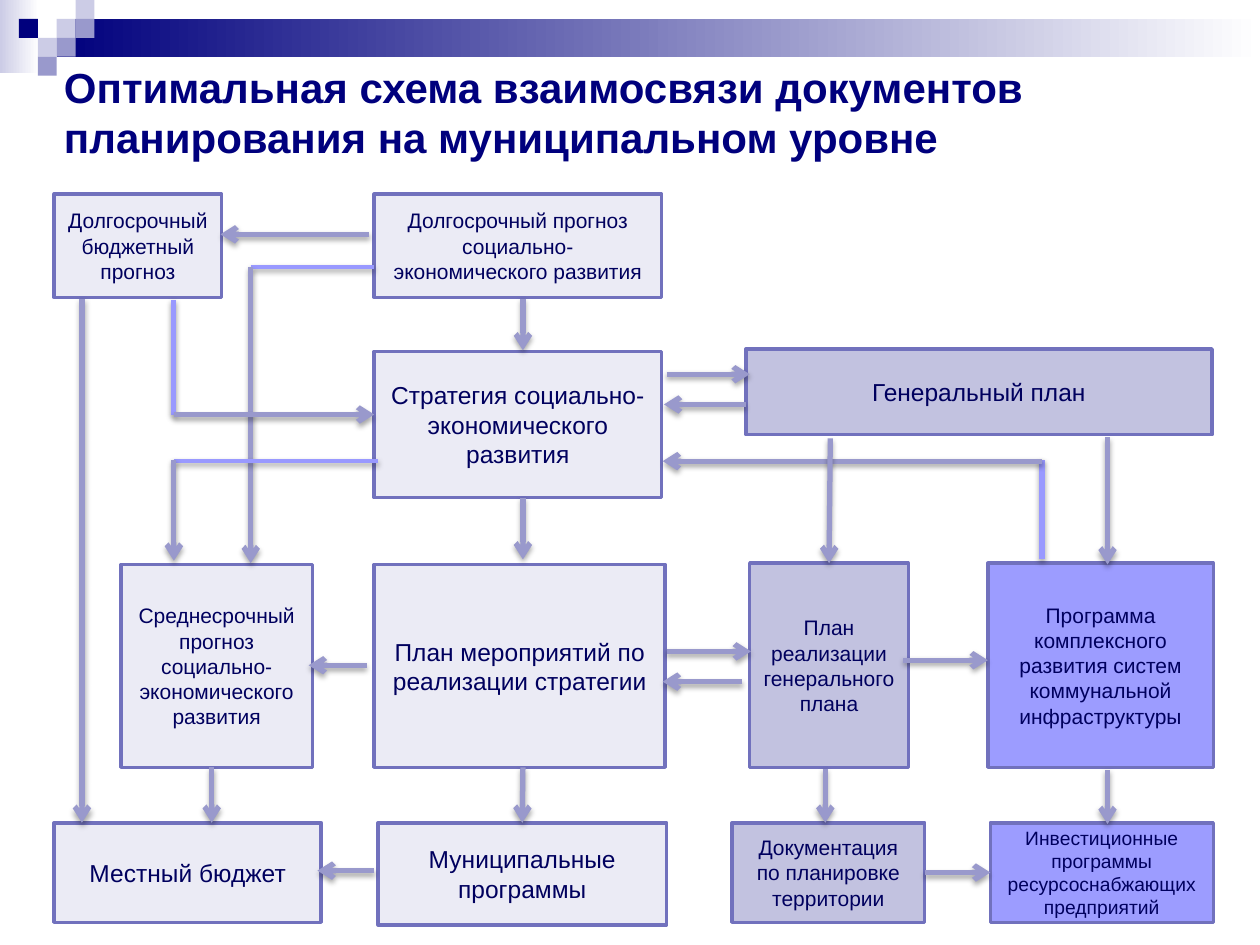
from typing import NamedTuple, Optional

from lxml.etree import SubElement
from pptx import Presentation
from pptx.dml.color import RGBColor
from pptx.enum.shapes import MSO_CONNECTOR, MSO_SHAPE
from pptx.enum.text import MSO_ANCHOR, PP_ALIGN
from pptx.oxml.ns import qn
from pptx.util import Inches, Pt

COLORS = {
    "navy": "00007D", "text": "00005E", "border": "7171BD",
    "pale": "EBEBF5", "lilac": "C2C2E0", "violet": "9C9CFF",
    "arrow": "9999CC", "branch": "9999FF",
    "light": "CCCCE6", "mid": "9999CC", "white": "FFFFFF",
}
TOP, LEFT, BOTTOM, RIGHT = range(4)


class Document(NamedTuple):
    text: str
    left: float
    top: float
    width: float
    height: float
    fill: str = "pale"
    size: int = 14


class Link(NamedTuple):
    x1: float
    y1: float
    x2: float
    y2: float
    begin: Optional[tuple] = None  # (document key, side)
    end: Optional[tuple] = None
    color: str = "arrow"
    width: float = 3
    arrow: bool = True


class Square(NamedTuple):
    column: int
    row: int
    color: str


DOCUMENTS = {
    "budget_forecast": Document("Долгосрочный бюджетный прогноз", 0.43, 1.54, 1.33, 0.82, size=12),
    "long_forecast": Document("Долгосрочный прогноз социально-экономического развития",
                              2.97, 1.54, 2.28, 0.82, size=12),
    "strategy": Document("Стратегия социально-экономического развития", 2.97, 2.79, 2.28, 1.16),
    "general_plan": Document("Генеральный план", 5.92, 2.77, 3.7, 0.68, "lilac"),
    "mid_forecast": Document("Среднесрочный прогноз социально-экономического развития",
                             0.96, 4.48, 1.52, 1.61, size=12),
    "actions": Document("План мероприятий по реализации стратегии", 2.97, 4.48, 2.31, 1.61),
    "plan_delivery": Document("План реализации генерального плана",
                              5.95, 4.47, 1.26, 1.62, "lilac", 12),
    "utilities": Document("Программа комплексного развития систем коммунальной инфраструктуры",
                          7.84, 4.47, 1.79, 1.62, "violet", 12),
    "local_budget": Document("Местный бюджет", 0.43, 6.53, 2.12, 0.79),
    "programs": Document("Муниципальные программы", 3, 6.53, 2.29, 0.81),
    "layout_docs": Document("Документация по планировке территории",
                            5.81, 6.53, 1.53, 0.79, "lilac", 12),
    "investment": Document("Инвестиционные программы ресурсоснабжающих предприятий",
                           7.86, 6.53, 1.77, 0.79, "violet", 11),
}

LINKS = [
    # Forecasts
    Link(2.93, 1.86, 1.75, 1.86),
    Link(1.99, 2.12, 2.97, 2.12, color="branch", width=2, arrow=False),
    Link(1.99, 2.12, 1.99, 4.47),
    Link(4.15, 2.37, 4.15, 2.78),
    Link(0.65, 2.37, 0.65, 6.53),
    # Strategy
    Link(1.38, 3.29, 1.38, 2.38, color="branch", arrow=False),
    Link(1.38, 3.29, 2.97, 3.29),
    Link(1.38, 3.66, 3, 3.66, color="branch", width=2, arrow=False),
    Link(1.38, 3.65, 1.38, 4.45),
    Link(4.15, 3.95, 4.15, 4.44),
    Link(5.29, 2.97, 5.95, 2.97),
    Link(5.92, 3.21, 5.27, 3.21),
    Link(8.27, 4.44, 8.27, 3.65, color="branch", arrow=False),
    Link(8.27, 3.66, 5.26, 3.66),
    # General plan
    Link(6.59, 3.48, 6.59, 4.47, end=("plan_delivery", TOP)),
    Link(8.79, 3.47, 8.79, 4.48),
    # Action plans
    Link(2.91, 5.28, 2.45, 5.28),
    Link(5.29, 5.17, 5.96, 5.17),
    Link(5.89, 5.41, 5.26, 5.41),
    Link(7.17, 5.24, 7.84, 5.24),
    # Bottom row
    Link(1.68, 6.09, 1.68, 6.53),
    Link(4.15, 6.09, 4.15, 6.53, end=("programs", TOP)),
    Link(6.55, 6.1, 6.55, 6.53),
    Link(8.79, 6.11, 8.79, 6.54),
    Link(2.97, 6.91, 2.52, 6.91),
    Link(7.34, 6.93, 7.86, 6.93, begin=("layout_docs", RIGHT), end=("investment", LEFT)),
]

SQUARE_SIDE = 0.15
MOSAIC = [
    Square(3, 1, "light"), Square(4, 0, "light"), Square(4, 1, "mid"), Square(2, 2, "light"),
    Square(1, 1, "navy"), Square(3, 2, "mid"), Square(2, 3, "mid"),
]


def rgb(name: str) -> RGBColor:
    return RGBColor.from_string(COLORS[name])


def write(shape, text: str, *, size: float, color: str = "text", bold: bool = False,
          align=PP_ALIGN.CENTER) -> None:
    frame = shape.text_frame
    frame.word_wrap = True
    frame.vertical_anchor = MSO_ANCHOR.MIDDLE
    paragraph = frame.paragraphs[0]
    paragraph.alignment = align
    run = paragraph.add_run()
    run.text = text
    run.font.name = "Arial"
    run.font.size = Pt(size)
    run.font.bold = bold
    run.font.color.rgb = rgb(color)


def add_rectangle(slide, left: float, top: float, width: float, height: float,
                  *fills: str, border: Optional[str] = None):
    """One fill is solid, two make a gradient from left to right."""
    rectangle = slide.shapes.add_shape(
        MSO_SHAPE.RECTANGLE, Inches(left), Inches(top), Inches(width), Inches(height))
    rectangle.shadow.inherit = False
    if len(fills) == 1:
        rectangle.fill.solid()
        rectangle.fill.fore_color.rgb = rgb(fills[0])
    else:
        rectangle.fill.gradient()
        rectangle.fill.gradient_angle = 0
        for position, (stop, fill) in enumerate(zip(rectangle.fill.gradient_stops, fills)):
            stop.position = position
            stop.color.rgb = rgb(fill)
    if border:
        rectangle.line.color.rgb = rgb(border)
        rectangle.line.width = Pt(2)
    else:
        rectangle.line.fill.background()
    return rectangle


def add_document(slide, document: Document):
    box = add_rectangle(slide, document.left, document.top, document.width, document.height,
                        document.fill, border="border")
    write(box, document.text, size=document.size)
    return box


def add_link(slide, link: Link, boxes: dict) -> None:
    connector = slide.shapes.add_connector(
        MSO_CONNECTOR.STRAIGHT, Inches(link.x1), Inches(link.y1), Inches(link.x2), Inches(link.y2))
    if link.begin:
        connector.begin_connect(boxes[link.begin[0]], link.begin[1])
    if link.end:
        connector.end_connect(boxes[link.end[0]], link.end[1])
    connector.line.color.rgb = rgb(link.color)
    connector.line.width = Pt(link.width)
    if link.arrow:
        SubElement(connector.line._get_or_add_ln(), qn("a:tailEnd"), type="arrow")
    # Soft shadow below the line
    effects = SubElement(connector._element.spPr, qn("a:effectLst"))
    shadow = SubElement(effects, qn("a:outerShdw"), blurRad=str(Pt(3.1)),
                        dist=str(Pt(1.8 if link.arrow else 1.6)), dir="5400000", rotWithShape="0")
    black = SubElement(shadow, qn("a:srgbClr"), val="000000")
    SubElement(black, qn("a:alpha"), val="35000" if link.arrow else "38000")


def main() -> None:
    deck = Presentation()
    deck.slide_width, deck.slide_height = Inches(10), Inches(7.5)
    slide = deck.slides.add_slide(deck.slide_layouts[6])

    # Header band and mosaic
    add_rectangle(slide, 0, 0, 0.31, 0.58, "light", "white")
    add_rectangle(slide, 0.45, 0.15, 9.55, 0.3, "navy", "white")
    for square in MOSAIC:
        add_rectangle(slide, square.column * SQUARE_SIDE, square.row * SQUARE_SIDE,
                      SQUARE_SIDE, SQUARE_SIDE, square.color)

    # Title
    title = slide.shapes.add_textbox(Inches(0.41), Inches(0.44), Inches(9), Inches(0.89))
    write(title, "Оптимальная схема взаимосвязи документов планирования на муниципальном уровне",
          size=24, color="navy", bold=True, align=PP_ALIGN.LEFT)

    # Scheme
    boxes = {key: add_document(slide, document) for key, document in DOCUMENTS.items()}
    for link in LINKS:
        add_link(slide, link, boxes)

    deck.save("out.pptx")


if __name__ == "__main__":
    main()
